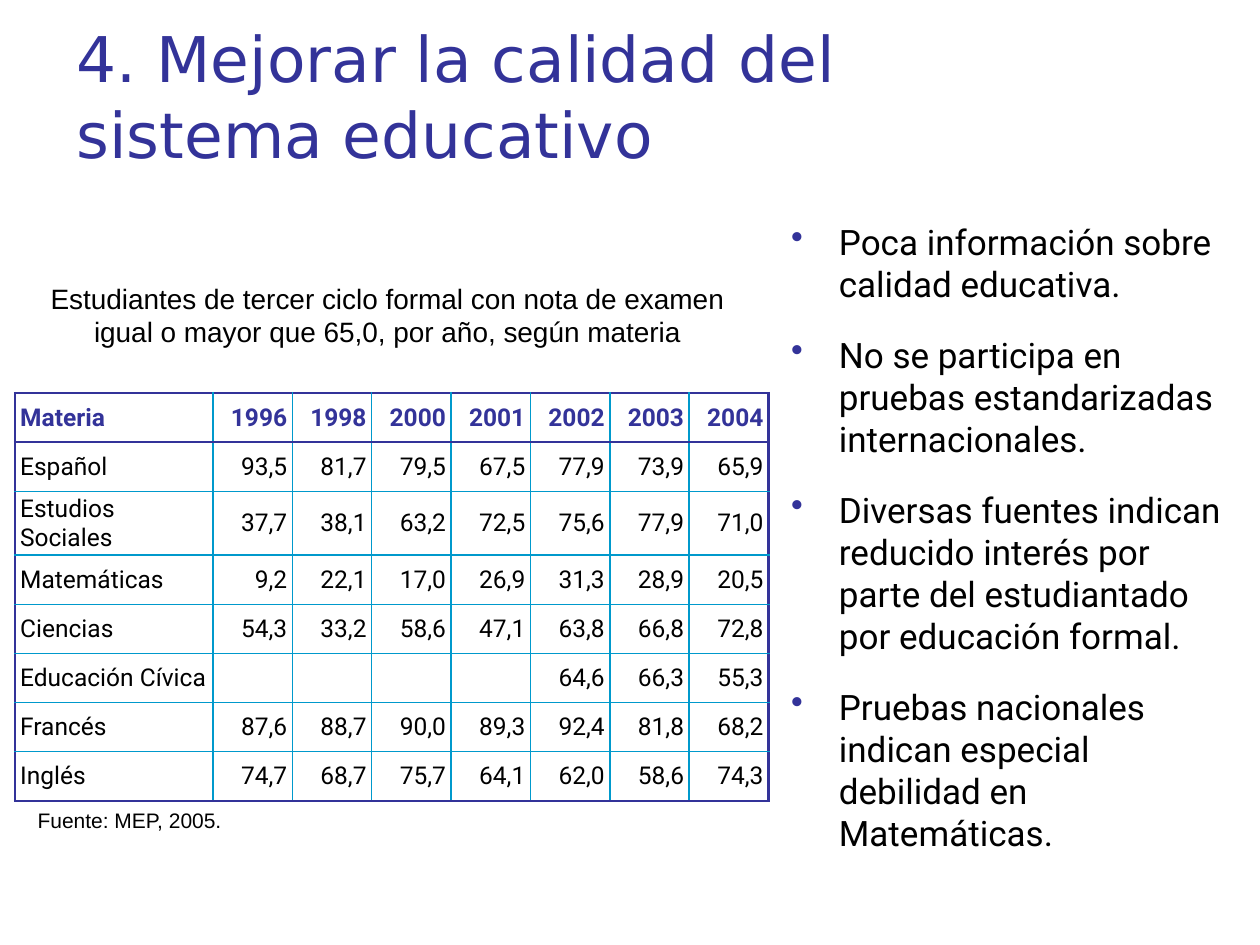
"""Build a slide on education quality with a table of exam results and key points."""
from lxml import etree
from pptx import Presentation
from pptx.dml.color import RGBColor
from pptx.enum import text
from pptx.oxml import ns
from pptx.util import Inches, Pt

INDIGO = RGBColor(0x33, 0x33, 0x99)
CYAN = RGBColor(0x00, 0x99, 0xCC)
BLACK = RGBColor(0x00, 0x00, 0x00)

RESULTS = [
    ["Materia", "1996", "1998", "2000", "2001", "2002", "2003", "2004"],
    ["Español", "93,5", "81,7", "79,5", "67,5", "77,9", "73,9", "65,9"],
    ["Estudios Sociales", "37,7", "38,1", "63,2", "72,5", "75,6", "77,9", "71,0"],
    ["Matemáticas", "9,2", "22,1", "17,0", "26,9", "31,3", "28,9", "20,5"],
    ["Ciencias", "54,3", "33,2", "58,6", "47,1", "63,8", "66,8", "72,8"],
    ["Educación Cívica", "", "", "", "", "64,6", "66,3", "55,3"],
    ["Francés", "87,6", "88,7", "90,0", "89,3", "92,4", "81,8", "68,2"],
    ["Inglés", "74,7", "68,7", "75,7", "64,1", "62,0", "58,6", "74,3"],
]
POINTS = [
    "Poca información sobre calidad educativa.",
    "No se participa en pruebas estandarizadas internacionales.",
    "Diversas fuentes indican reducido interés por parte del estudiantado por educación formal.",
    "Pruebas nacionales indican especial debilidad en Matemáticas.",
]


def style(paragraph, font_name, size, color, bold=False):
    font = paragraph.font
    if paragraph.runs:
        font = paragraph.runs[0].font
    font.name, font.size, font.bold = font_name, Pt(size), bold
    font.color.rgb = color


def add_text(left, top, width, height, content, font_name, size, color):
    box = slide.shapes.add_textbox(Inches(left), Inches(top), Inches(width), Inches(height))
    frame = box.text_frame
    frame.word_wrap = True
    frame.vertical_anchor = text.MSO_ANCHOR.MIDDLE
    frame.text = content
    for paragraph in frame.paragraphs:
        style(paragraph, font_name, size, color)
    return frame


prs = Presentation()
prs.slide_width, prs.slide_height = Inches(10), Inches(7.5)
slide = prs.slides.add_slide(prs.slide_layouts[6])

add_text(0.51, 0.13, 7.08, 1.25, "4. Mejorar la calidad del sistema educativo",
         "DejaVu Sans", 36, INDIGO)

points = add_text(6.18, 1.7, 3.7, 5.43, "\n".join(POINTS), "Roboto", 20, BLACK)
points.vertical_anchor = text.MSO_ANCHOR.TOP
for index, point in enumerate(points.paragraphs):
    point.space_before = Pt(16.5 if index else 0)
    properties = point._p.get_or_add_pPr()
    properties.set("marL", str(Inches(0.38)))
    properties.set("indent", str(-Inches(0.38)))
    bullet_color = etree.SubElement(properties, ns.qn("a:buClr"))
    etree.SubElement(bullet_color, ns.qn("a:srgbClr"), val=str(INDIGO))
    etree.SubElement(properties, ns.qn("a:buChar"), char="•")

heading = add_text(0.2, 2.18, 5.75, 0.64,
                   "Estudiantes de tercer ciclo formal con nota de examen "
                   "igual o mayor que 65,0, por año, según materia",
                   "Arial", 16, BLACK)
heading.paragraphs[0].alignment = text.PP_ALIGN.CENTER

last_row, last_column = len(RESULTS) - 1, len(RESULTS[0]) - 1
results = slide.shapes.add_table(len(RESULTS), len(RESULTS[0]), Inches(0.12), Inches(3.12),
                                 Inches(5.98), Inches(3.15)).table
results.first_row = results.horz_banding = False
for index, column in enumerate(results.columns):
    column.width = Inches(0.63 if index else 1.57)
for row, values in enumerate(RESULTS):
    results.rows[row].height = Inches(0.39)
    for column, value in enumerate(values):
        cell = results.cell(row, column)
        cell.text = value
        cell.vertical_anchor = text.MSO_ANCHOR.MIDDLE
        cell.margin_left = cell.margin_right = Inches(0.04)
        cell.margin_top = cell.margin_bottom = Inches(0.02)
        paragraph = cell.text_frame.paragraphs[0]
        paragraph.alignment = text.PP_ALIGN.RIGHT if column else text.PP_ALIGN.LEFT
        style(paragraph, "Roboto", 14, BLACK if row else INDIGO, bold=row == 0)
        cell.fill.background()
        outer_sides = {
            "a:lnL": column == 0,
            "a:lnR": column == last_column,
            "a:lnT": row in (0, 1),
            "a:lnB": row in (0, last_row),
        }
        for position, (side, outer) in enumerate(outer_sides.items()):
            border = etree.Element(ns.qn(side), w=str(Pt(1.5 if outer else 1)))
            fill = etree.SubElement(border, ns.qn("a:solidFill"))
            etree.SubElement(fill, ns.qn("a:srgbClr"), val=str(INDIGO if outer else CYAN))
            cell._tc.get_or_add_tcPr().insert(position, border)

add_text(0.2, 6.36, 1.78, 0.3, "Fuente: MEP, 2005.", "Arial", 12, BLACK)

prs.save("out.pptx")
